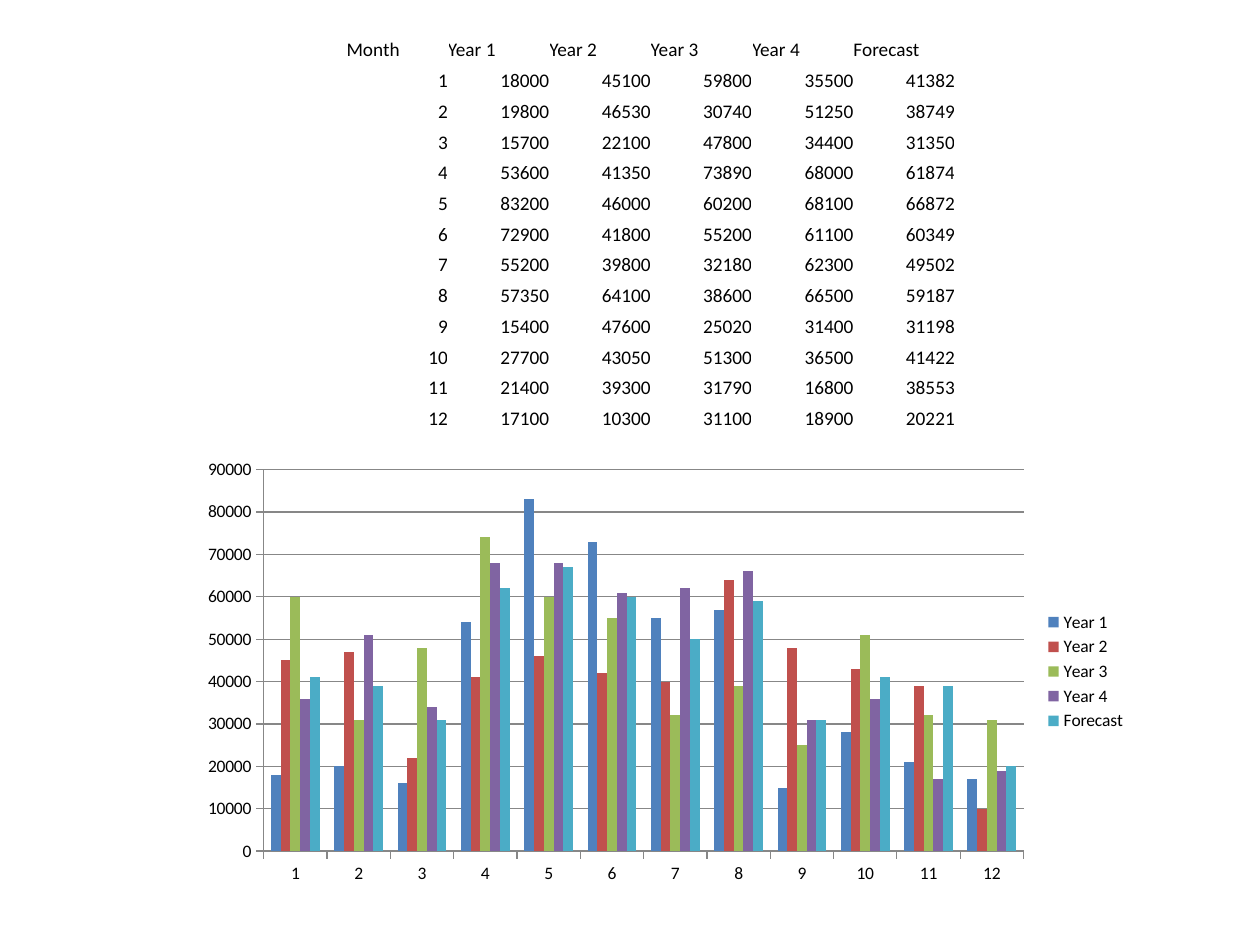
from pptx import Presentation
from pptx.chart.data import CategoryChartData
from pptx.dml.color import RGBColor
from pptx.enum.chart import XL_CHART_TYPE, XL_LEGEND_POSITION, XL_TICK_MARK
from pptx.enum.text import MSO_ANCHOR, PP_ALIGN
from pptx.util import Inches, Pt

FONT = "Calibri"
COLOURS = {
    "text": "000000",
    "line": "878787",
    "Year 1": "4F81BD",
    "Year 2": "C0504D",
    "Year 3": "9BBB59",
    "Year 4": "8064A2",
    "Forecast": "4BACC6",
}
SALES = {
    "Year 1": [18000, 19800, 15700, 53600, 83200, 72900,
               55200, 57350, 15400, 27700, 21400, 17100],
    "Year 2": [45100, 46530, 22100, 41350, 46000, 41800,
               39800, 64100, 47600, 43050, 39300, 10300],
    "Year 3": [59800, 30740, 47800, 73890, 60200, 55200,
               32180, 38600, 25020, 51300, 31790, 31100],
    "Year 4": [35500, 51250, 34400, 68000, 68100, 61100,
               62300, 66500, 31400, 36500, 16800, 18900],
    "Forecast": [41382, 38749, 31350, 61874, 66872, 60349,
                 49502, 59187, 31198, 41422, 38553, 20221],
}
MONTHS = range(1, 13)


def colour(name):
    return RGBColor.from_string(COLOURS[name])


def style_font(font, size):
    font.name = FONT
    font.size = Pt(size)
    font.color.rgb = colour("text")


def fill_cell(cell, text, alignment):
    cell.fill.background()
    cell.vertical_anchor = MSO_ANCHOR.BOTTOM
    cell.margin_left = cell.margin_right = 0
    cell.margin_top = cell.margin_bottom = 0
    para = cell.text_frame.paragraphs[0]
    para.alignment = alignment
    span = para.add_run()
    span.text = text
    style_font(span.font, 11)


def add_sales_table(page):
    rows = [["Month", *SALES], *zip(MONTHS, *SALES.values())]
    frame = page.shapes.add_table(
        len(rows), len(rows[0]),
        Inches(2.75), Inches(0.25), Inches(4.83), Inches(3.17))
    table = frame.table
    table.first_row = False
    table.horz_banding = False
    for row_number, row in enumerate(rows):
        alignment = PP_ALIGN.RIGHT if row_number else PP_ALIGN.LEFT
        for column_number, value in enumerate(row):
            fill_cell(table.cell(row_number, column_number), str(value), alignment)


def style_line(line):
    line.color.rgb = colour("line")
    line.width = Pt(0.75)


def style_axis(axis):
    axis.major_tick_mark = XL_TICK_MARK.OUTSIDE
    axis.minor_tick_mark = XL_TICK_MARK.NONE
    style_line(axis.format.line)


def add_sales_chart(page):
    data = CategoryChartData(number_format="General")
    data.categories = [str(month) for month in MONTHS]
    for name, values in SALES.items():
        data.add_series(name, [round(value, -3) for value in values])
    chart = page.shapes.add_chart(
        XL_CHART_TYPE.COLUMN_CLUSTERED,
        Inches(1.5), Inches(3.58), Inches(7.54), Inches(3.5), data).chart
    style_font(chart.font, 10)
    chart.has_title = False
    chart.has_legend = True
    chart.legend.position = XL_LEGEND_POSITION.RIGHT
    chart.legend.include_in_layout = False
    style_axis(chart.category_axis)
    style_axis(chart.value_axis)
    chart.value_axis.minimum_scale = 0
    chart.value_axis.maximum_scale = 90000
    chart.value_axis.major_unit = 10000
    chart.value_axis.has_major_gridlines = True
    style_line(chart.value_axis.major_gridlines.format.line)
    plot = chart.plots[0]
    plot.vary_by_categories = False
    plot.gap_width = 150
    plot.overlap = 0
    for series in plot.series:
        series.format.fill.solid()
        series.format.fill.fore_color.rgb = colour(series.name)


def main():
    deck = Presentation()
    deck.slide_width = Inches(10)
    deck.slide_height = Inches(7.5)
    page = deck.slides.add_slide(deck.slide_layouts[6])
    add_sales_chart(page)
    add_sales_table(page)
    deck.save("out.pptx")


if __name__ == "__main__":
    main()
